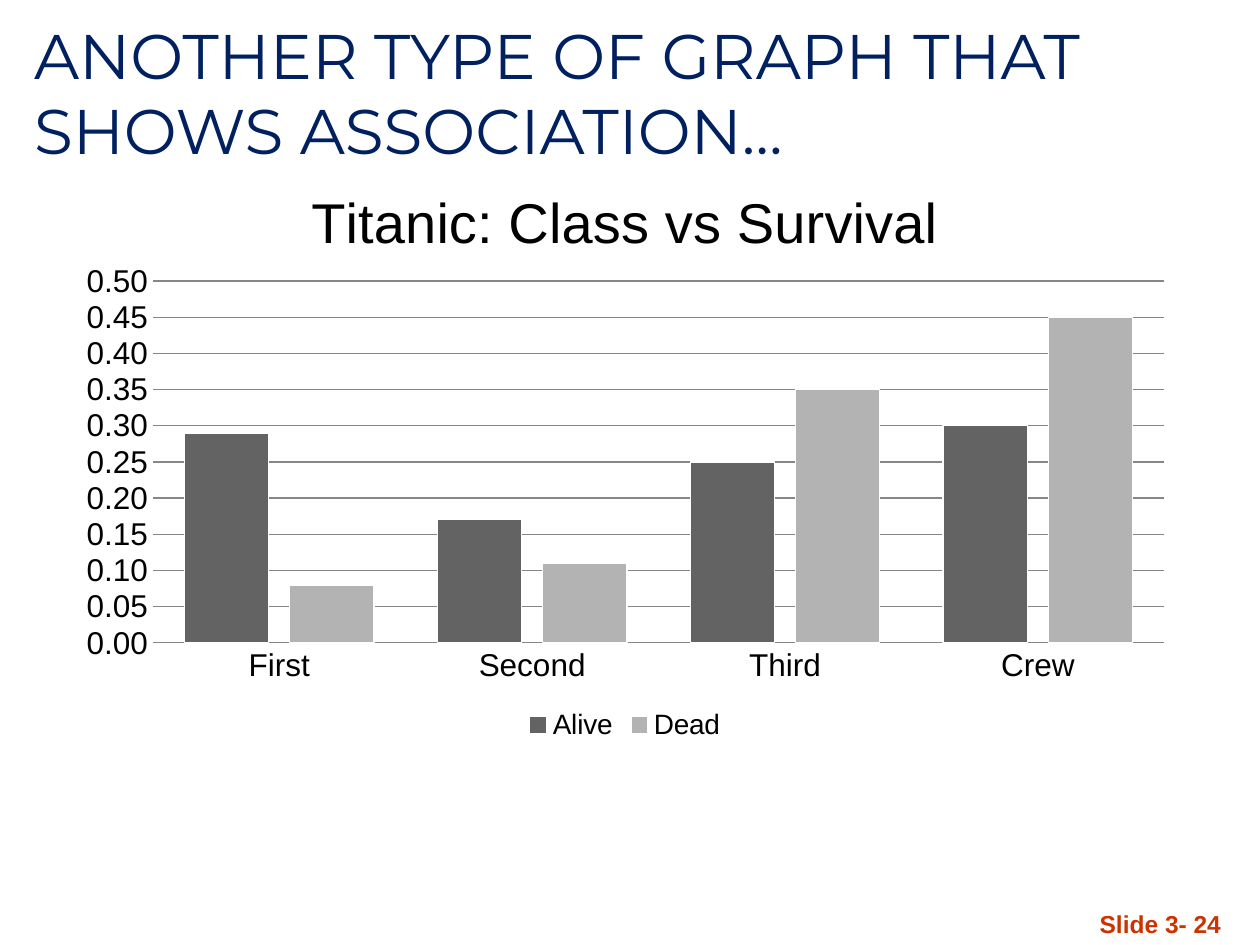
from dataclasses import dataclass

from lxml import etree
from pptx import Presentation
from pptx.chart.data import CategoryChartData
from pptx.dml.color import RGBColor
from pptx.enum.chart import XL_CHART_TYPE, XL_LEGEND_POSITION, XL_TICK_MARK
from pptx.enum.text import MSO_ANCHOR, PP_ALIGN
from pptx.oxml.ns import qn
from pptx.util import Inches, Pt

COLUMNS = XL_CHART_TYPE.COLUMN_CLUSTERED
BOTTOM = XL_LEGEND_POSITION.BOTTOM
NO_TICK = XL_TICK_MARK.NONE
TOP, LOW = MSO_ANCHOR.TOP, MSO_ANCHOR.BOTTOM
LEFT, RIGHT = PP_ALIGN.LEFT, PP_ALIGN.RIGHT

WIDTH, HEIGHT = Inches(10), Inches(7.5)
COLORS = {
    "navy": "002060", "red": "CC3300", "black": "000000", "white": "FFFFFF",
    "grid": "878787", "dark": "636363", "light": "B3B3B3",
}


@dataclass
class Box:
    """A frame in inches."""
    left: float
    top: float
    width: float
    height: float

    def emu(self) -> list:
        return [Inches(v) for v in (self.left, self.top, self.width, self.height)]


@dataclass
class Group:
    """One series of bars."""
    name: str
    values: tuple
    color: str


CLASSES = ("First", "Second", "Third", "Crew")
GROUPS = (
    Group("Alive", (0.29, 0.17, 0.25, 0.30), "dark"),
    Group("Dead", (0.08, 0.11, 0.35, 0.45), "light"),
)
# Plot area as shares of the chart frame
PLOT = {"x": 0.08, "y": 0.21, "w": 0.9, "h": 0.615}


def shade(name: str) -> RGBColor:
    return RGBColor.from_string(COLORS[name])


def style(font, size: float, color: str = "black", face: str = "Arial",
          bold: bool = False) -> None:
    for key, value in {"name": face, "size": Pt(size), "bold": bold}.items():
        setattr(font, key, value)
    font.color.rgb = shade(color)


def write(shape, box: Box, text: str, align, anchor, **look) -> None:
    shape.left, shape.top, shape.width, shape.height = box.emu()
    frame = shape.text_frame
    frame.word_wrap, frame.vertical_anchor = True, anchor
    frame.text = text
    para = frame.paragraphs[0]
    para.alignment = align
    for run in para.runs:
        style(run.font, **look)


def place(chart, shares: dict) -> None:
    """Fix the inner plot area by hand."""
    plot = chart.plots[0]._element.getparent()
    for old in plot.findall(qn("c:layout")):
        plot.remove(old)
    layout = etree.Element(qn("c:layout"))
    manual = etree.SubElement(layout, qn("c:manualLayout"))
    rules = {"layoutTarget": "inner", "xMode": "edge", "yMode": "edge", **shares}
    for key, value in rules.items():
        etree.SubElement(manual, qn("c:" + key)).set("val", str(value))
    plot.insert(0, layout)


def draw(slide, box: Box) -> None:
    data = CategoryChartData(number_format="0.00")
    data.categories = CLASSES
    for group in GROUPS:
        data.add_series(group.name, group.values)
    chart = slide.shapes.add_chart(COLUMNS, *box.emu(), data).chart
    style(chart.font, 10)

    # Heading and legend
    chart.has_title = True
    head = chart.chart_title
    head.include_in_layout = False
    head.text_frame.text = "Titanic: Class vs Survival"
    style(head.text_frame.paragraphs[0].runs[0].font, 32)
    chart.has_legend = True
    chart.legend.position = BOTTOM
    chart.legend.include_in_layout = False
    style(chart.legend.font, 16)

    # Axes
    cats, vals = chart.category_axis, chart.value_axis
    for axis in (cats, vals):
        axis.major_tick_mark = axis.minor_tick_mark = NO_TICK
        style(axis.tick_labels.font, 18)
    scale = {"minimum_scale": 0, "maximum_scale": 0.5, "major_unit": 0.05,
             "has_major_gridlines": True}
    for key, value in scale.items():
        setattr(vals, key, value)
    vals.tick_labels.number_format = "#,##0.00"
    vals.tick_labels.number_format_is_linked = False
    vals.format.line.fill.background()
    for line in (cats.format.line, vals.major_gridlines.format.line):
        line.color.rgb, line.width = shade("grid"), Pt(0.75)

    # Bars
    plot = chart.plots[0]
    for key, value in {"gap_width": 75, "overlap": -25,
                       "vary_by_categories": False}.items():
        setattr(plot, key, value)
    for bars, group in zip(plot.series, GROUPS):
        bars.format.fill.solid()
        bars.format.fill.fore_color.rgb = shade(group.color)
        bars.format.line.color.rgb = shade("white")
        bars.format.line.width = Pt(0.75)
    place(chart, PLOT)


def main() -> None:
    deck = Presentation()
    deck.slide_width, deck.slide_height = WIDTH, HEIGHT
    slide = deck.slides.add_slide(deck.slide_layouts[5])

    # Slide number
    foot = Box(7.71, 7, 2.08, 0.5)
    write(slide.shapes.add_textbox(*foot.emu()), foot, "Slide 3- 24",
          RIGHT, LOW, size=14, color="red", bold=True)

    # Title
    write(slide.shapes.title, Box(0.17, 0.08, 9.58, 1.17),
          "ANOTHER TYPE OF GRAPH THAT \vSHOWS ASSOCIATION…",
          LEFT, TOP, size=36, color="navy", face="Montserrat")

    # Chart
    draw(slide, Box(0.5, 1.25, 8.92, 4.67))
    deck.save("out.pptx")


if __name__ == "__main__":
    main()
